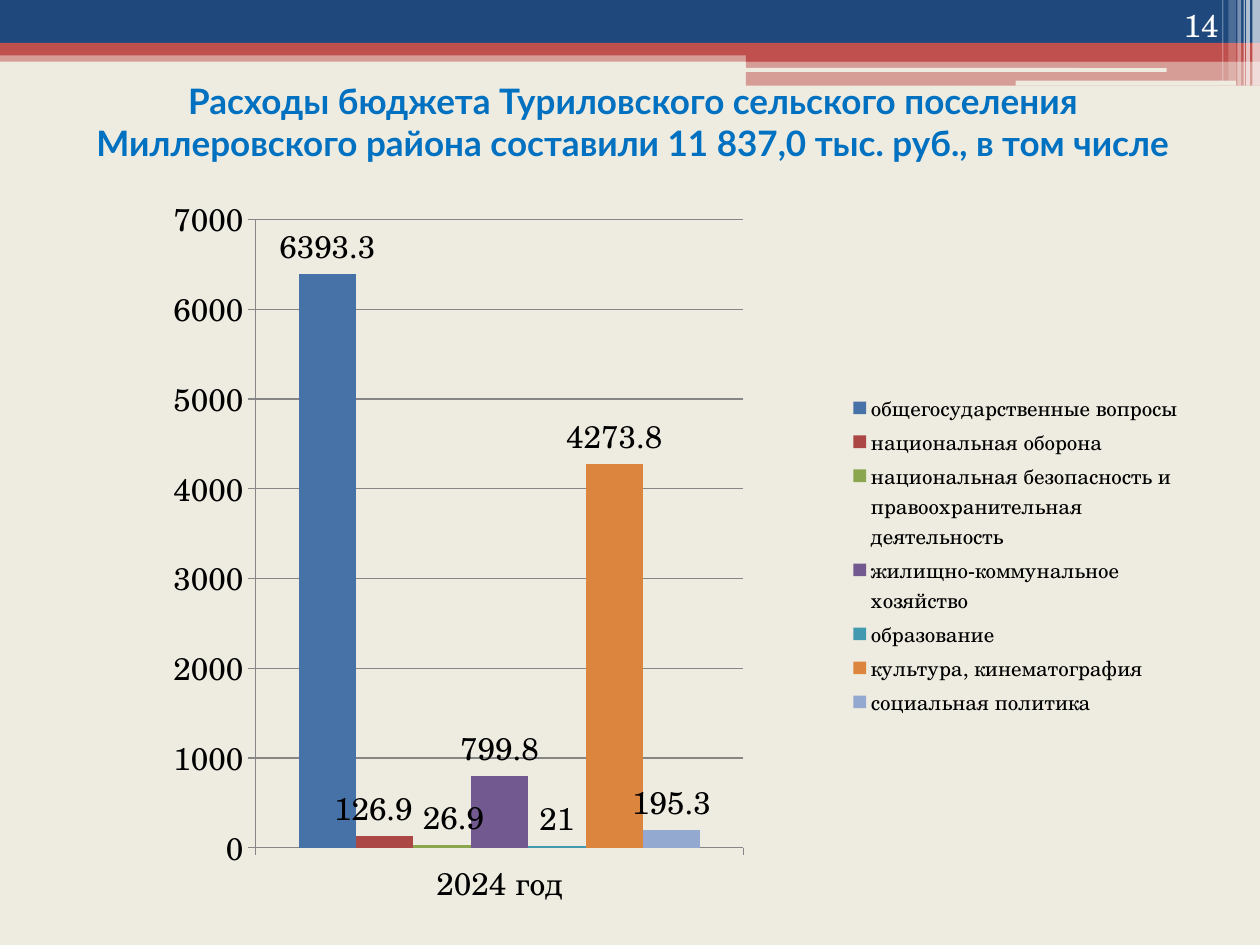
import dataclasses

import lxml.etree
import pptx
import pptx.chart.data
import pptx.dml.color
import pptx.enum.chart
import pptx.enum.shapes
import pptx.enum.text
import pptx.oxml.ns
import pptx.util

Inches = pptx.util.Inches
qn = pptx.oxml.ns.qn


@dataclasses.dataclass(frozen=True)
class Theme:
    paper: str = "EEECE1"
    navy: str = "1F497D"
    red: str = "C0504D"
    white: str = "FFFFFF"
    black: str = "000000"
    title: str = "0070C0"
    grid: str = "868686"
    heading_font: str = "Lato"
    body_font: str = "TeX Gyre Schola"
    title_size: int = 20
    body_size: int = 18
    legend_size: int = 12


THEME = Theme()
TITLE = ("Расходы бюджета Туриловского сельского поселения "
         "Миллеровского района составили 11 837,0 тыс. руб., в том числе")
EXPENSES = [
    ("общегосударственные вопросы", 6393.3, "4672A8", 0),
    ("национальная оборона", 126.9, "AB4744", -0.01),
    ("национальная безопасность и правоохранительная деятельность", 26.9, "8AA64F", 0.01),
    ("жилищно-коммунальное хозяйство", 799.8, "725990", 0),
    ("образование", 21, "4299B0", 0),
    ("культура, кинематография", 4273.8, "DC853E", 0),
    ("социальная политика", 195.3, "93A9CF", 0),
]
BANDS = [
    (0, 0.4, 10, 0.09, THEME.red, 50),
    (0, 0, 10, 0.34, THEME.navy, 100),
    (0, 0.34, 10, 0.1, THEME.red, 100),
    (5.92, 0.39, 4.08, 0.1, THEME.red, 100),
    (5.92, 0.48, 4.08, 0.2, THEME.red, 50),
]
SLITS = [(5.91, 0.54, 3.35, 0.03), (8.06, 0.64, 1.75, 0.04)]
STRIPES = [
    (9.94, 0.06, 0.68, 65),
    (9.89, 0.03, 0.68, 65),
    (9.87, 0.01, 0.68, 60),
    (9.82, 0.03, 0.68, 40),
    (9.75, 0.06, 0.64, 20),
    (9.7, 0.01, 0.64, 30),
]


def rgb(color):
    return pptx.dml.color.RGBColor.from_string(color)


def style_font(font, *, size, name, color):
    font.size = pptx.util.Pt(size)
    font.name = name
    font.color.rgb = rgb(color)


def write(tf, text, *, size, font, color, bold=False, align="LEFT", anchor="TOP"):
    tf.word_wrap = True
    tf.vertical_anchor = getattr(pptx.enum.text.MSO_ANCHOR, anchor)
    p = tf.paragraphs[0]
    p.alignment = getattr(pptx.enum.text.PP_ALIGN, align)
    r = p.add_run()
    r.text = text
    r.font.bold = bold
    style_font(r.font, size=size, name=font, color=color)


def set_layout(parent, index, **values):
    for old in parent.findall(qn("c:layout")):
        parent.remove(old)
    layout = lxml.etree.Element(qn("c:layout"))
    manual = lxml.etree.SubElement(layout, qn("c:manualLayout"))
    for name, value in values.items():
        lxml.etree.SubElement(manual, qn(f"c:{name}")).set("val", str(value))
    parent.insert(index, layout)


class SlideBuilder:
    def __init__(self, slide, theme):
        self.slide = slide
        self.theme = theme
        fill = slide.background.fill
        fill.solid()
        fill.fore_color.rgb = rgb(theme.paper)

    def block(self, x, y, w, h, color, opacity=100, kind="RECTANGLE"):
        sp = self.slide.shapes.add_shape(
            getattr(pptx.enum.shapes.MSO_SHAPE, kind),
            Inches(x), Inches(y), Inches(w), Inches(h))
        sp.shadow.inherit = False
        sp.line.fill.background()
        sp.fill.solid()
        sp.fill.fore_color.rgb = rgb(color)
        if opacity < 100:
            clr = sp.element.spPr.find(qn("a:solidFill"))[0]
            lxml.etree.SubElement(clr, qn("a:alpha")).set("val", str(opacity * 1000))

    def text(self, x, y, w, h, text, top=0.05, **style):
        box = self.slide.shapes.add_textbox(Inches(x), Inches(y), Inches(w), Inches(h))
        box.text_frame.margin_top = Inches(top)
        write(box.text_frame, text, **style)

    def column_chart(self, x, y, w, h, category, rows):
        t = self.theme
        body = dict(size=t.body_size, name=t.body_font, color=t.black)
        data = pptx.chart.data.CategoryChartData()
        data.categories = [category]
        for name, value, *_ in rows:
            data.add_series(name, [value])
        chart = self.slide.shapes.add_chart(
            pptx.enum.chart.XL_CHART_TYPE.COLUMN_CLUSTERED,
            Inches(x), Inches(y), Inches(w), Inches(h), data).chart
        chart.has_title = False
        style_font(chart.font, **body)

        plot = chart.plots[0]
        plot.gap_width = 150
        plot.overlap = 0
        plot.vary_by_categories = False
        outside = pptx.enum.chart.XL_LABEL_POSITION.OUTSIDE_END
        for series, (_, _, color, shift) in zip(plot.series, rows):
            series.format.fill.solid()
            series.format.fill.fore_color.rgb = rgb(color)
            series.data_labels.show_value = True
            series.data_labels.position = outside
            if shift:
                label = series.points[0].data_label
                style_font(label.font, **body)
                label.position = outside
        shifts = [shift for *_, shift in rows if shift]
        for label, shift in zip(list(chart.element.iter(qn("c:dLbl"))), shifts):
            set_layout(label, 1, x=shift, y=0)

        axis = chart.value_axis
        axis.minimum_scale, axis.maximum_scale, axis.major_unit = 0, 7000, 1000
        axis.has_major_gridlines = True
        for part in (axis, chart.category_axis, axis.major_gridlines):
            part.format.line.color.rgb = rgb(t.grid)
            part.format.line.width = pptx.util.Pt(0.75)
        for part in (axis, chart.category_axis):
            part.major_tick_mark = pptx.enum.chart.XL_TICK_MARK.OUTSIDE

        chart.has_legend = True
        legend = chart.legend
        legend.position = pptx.enum.chart.XL_LEGEND_POSITION.RIGHT
        legend.include_in_layout = False
        style_font(legend.font, size=t.legend_size, name=t.body_font, color=t.black)
        root = chart.element.find(qn("c:chart"))
        edges = dict(xMode="edge", yMode="edge")
        set_layout(root.find(qn("c:plotArea")), 0, layoutTarget="inner", **edges,
                   x=0.17, y=0.03, w=0.43, h=0.89)
        set_layout(root.find(qn("c:legend")), 1, **edges, x=0.69, y=0.27, w=0.3, h=0.47)


def main():
    """Build the slide on budget expenses and save it."""
    prs = pptx.Presentation()
    prs.slide_width, prs.slide_height = Inches(10), Inches(7.5)
    s = SlideBuilder(prs.slides.add_slide(prs.slide_layouts[6]), THEME)
    for band in BANDS:
        s.block(*band)
    for slit in SLITS:
        s.block(*slit, THEME.paper, kind="ROUNDED_RECTANGLE")
    for x, w, h, opacity in STRIPES:
        s.block(x, 0, w, h, THEME.white, opacity)
    s.text(0.39, 0.63, 9.27, 0.9, TITLE, top=0, size=THEME.title_size,
           font=THEME.heading_font, color=THEME.title, bold=True, align="CENTER")
    s.column_chart(0.5, 1.56, 9, 5.63, "2024 год", EXPENSES)
    s.text(8.94, 0, 0.83, 0.4, "14", size=THEME.body_size, font=THEME.body_font,
           color=THEME.white, align="RIGHT", anchor="BOTTOM")
    prs.save("out.pptx")


if __name__ == "__main__":
    main()
